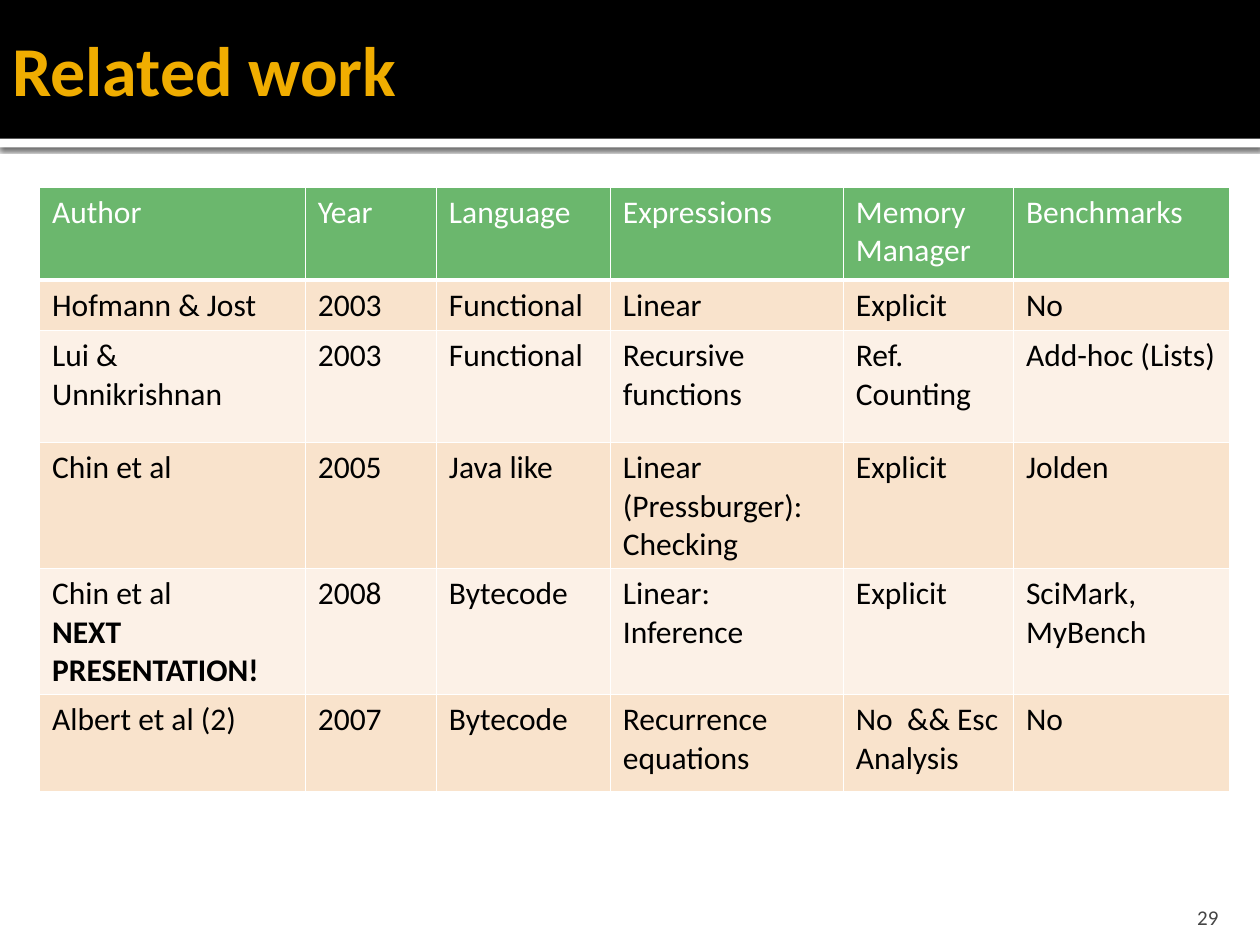
from pptx import Presentation
from pptx.dml.color import RGBColor
from pptx.enum import shapes, text
from pptx.oxml import parse_xml
from pptx.util import Pt

NS = 'xmlns:a="http://schemas.openxmlformats.org/drawingml/2006/main"'
FONT = "Calibri"
BLACK = RGBColor(0x00, 0x00, 0x00)
WHITE = RGBColor(0xFF, 0xFF, 0xFF)
GOLD = RGBColor(0xF0, 0xAD, 0x00)
GREY = RGBColor(0x45, 0x45, 0x45)
GREEN = RGBColor(0x6B, 0xB7, 0x6D)
PEACH = RGBColor(0xF9, 0xE3, 0xCC)
CREAM = RGBColor(0xFC, 0xF1, 0xE7)

TITLE = "Related work"
PAGE = "29"
HEADER = ("Author", "Year", "Language", "Expressions", "Memory\nManager", "Benchmarks")
WORKS = [
    ("Hofmann & Jost", "2003", "Functional", "Linear", "Explicit", "No"),
    ("Lui & Unnikrishnan", "2003", "Functional", "Recursive functions",
     "Ref. Counting", "Add-hoc (Lists)"),
    ("Chin et al", "2005", "Java like", "Linear (Pressburger): Checking",
     "Explicit", "Jolden"),
    ("Chin et al\nNEXT PRESENTATION!", "2008", "Bytecode", "Linear: Inference",
     "Explicit", "SciMark, MyBench"),
    ("Albert et al (2)", "2007", "Bytecode", "Recurrence equations",
     "No  && Esc Analysis", "No"),
]
BOLD_LINES = {"NEXT PRESENTATION!"}
COLUMN_WIDTHS = (151.9, 74.9, 99.4, 133.2, 97.2, 123.8)
ROW_HEIGHTS = (53.3, 25.2, 64, 34.6, 34.6, 55.4)


def set_font(paragraph, size, color, bold=False):
    font = paragraph.font
    font.name, font.size, font.bold = FONT, Pt(size), bold
    font.color.rgb = color


def add_band(slide, top, height, color):
    band = slide.shapes.add_shape(
        shapes.MSO_SHAPE.RECTANGLE, 0, Pt(top), Pt(720), Pt(height))
    band.shadow.inherit = False
    band.fill.solid()
    band.fill.fore_color.rgb = color
    band.line.fill.background()
    return band


def add_label(slide, words, box, insets, anchor, align, size, color, bold=False):
    frame = slide.shapes.add_textbox(*map(Pt, box)).text_frame
    frame.word_wrap = True
    frame.vertical_anchor = anchor
    (frame.margin_left, frame.margin_top,
     frame.margin_right, frame.margin_bottom) = map(Pt, insets)
    frame.text = words
    frame.paragraphs[0].alignment = align
    set_font(frame.paragraphs[0], size, color, bold)


def set_borders(cell, bottom):
    properties = cell._tc.get_or_add_tcPr()
    widths = {"lnL": 1, "lnR": 1, "lnT": 1, "lnB": bottom}
    for position, (side, width) in enumerate(widths.items()):
        properties.insert(position, parse_xml(
            f'<a:{side} {NS} w="{Pt(width)}"><a:solidFill>'
            f'<a:srgbClr val="{WHITE}"/></a:solidFill></a:{side}>'))


def add_works_table(slide):
    rows = [HEADER] + WORKS
    table = slide.shapes.add_table(
        len(rows), len(HEADER), Pt(22.6), Pt(106.8),
        Pt(sum(COLUMN_WIDTHS)), Pt(sum(ROW_HEIGHTS))).table
    for column, width in zip(table.columns, COLUMN_WIDTHS):
        column.width = Pt(width)
    for row, height in zip(table.rows, ROW_HEIGHTS):
        row.height = Pt(height)
    for r, entries in enumerate(rows):
        is_header = r == 0
        fill = GREEN if is_header else PEACH if r % 2 else CREAM
        for c, entry in enumerate(entries):
            cell = table.cell(r, c)
            cell.text = entry
            cell.fill.solid()
            cell.fill.fore_color.rgb = fill
            set_borders(cell, 3 if is_header else 1)
            for line in cell.text_frame.paragraphs:
                set_font(line, 18, WHITE if is_header else BLACK,
                         line.text in BOLD_LINES)


def main():
    deck = Presentation()
    deck.slide_width, deck.slide_height = Pt(720), Pt(540)
    slide = deck.slides.add_slide(deck.slide_layouts[6])

    strip = add_band(slide, 78.5, 5.8, WHITE)
    strip._element.spPr.find(
        "{http://schemas.openxmlformats.org/drawingml/2006/main}effectLst"
    ).append(parse_xml(
        f'<a:outerShdw {NS} blurRad="{Pt(2.5)}" dist="{Pt(0.8)}" dir="5400000" '
        f'algn="tl" rotWithShape="0"><a:srgbClr val="{BLACK}">'
        '<a:alpha val="60000"/></a:srgbClr></a:outerShdw>'))
    add_band(slide, 0, 79.2, BLACK)

    add_label(slide, TITLE, (0, 11.5, 720, 55.4), (7.2, 3.6, 3.6, 3.6),
              text.MSO_ANCHOR.MIDDLE, text.PP_ALIGN.LEFT, 40, GOLD, True)
    add_label(slide, PAGE, (645.8, 509.8, 57.6, 21.6), (7.2, 3.6, 7.2, 0),
              text.MSO_ANCHOR.BOTTOM, text.PP_ALIGN.RIGHT, 12, GREY)
    add_works_table(slide)
    deck.save("out.pptx")


if __name__ == "__main__":
    main()
